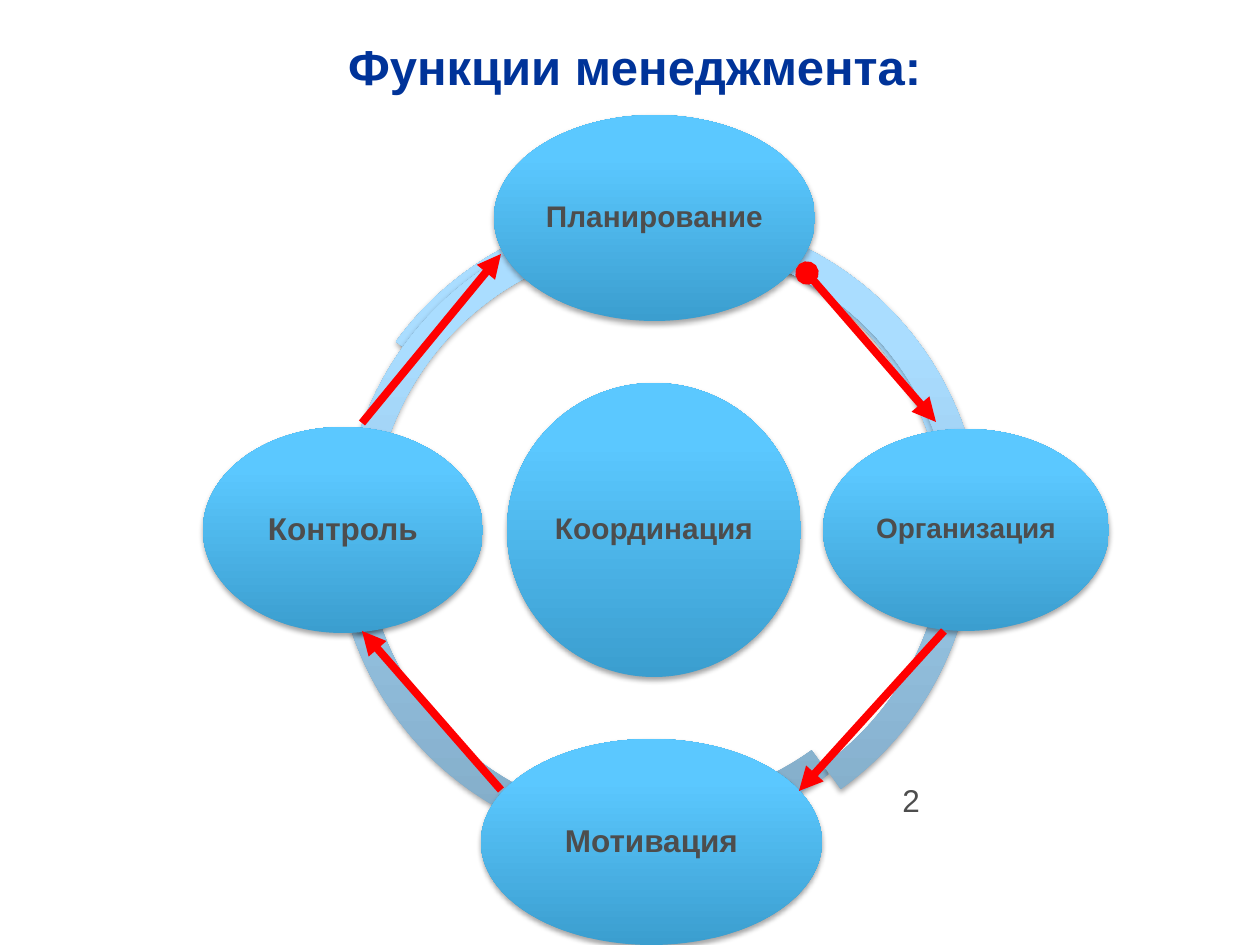
from dataclasses import dataclass

from lxml.etree import SubElement
from pptx import Presentation
from pptx.dml.color import RGBColor
from pptx.enum.shapes import MSO_CONNECTOR as CONN, MSO_SHAPE as SHAPE
from pptx.enum.text import MSO_ANCHOR as ANCHOR, PP_ALIGN as ALIGN
from pptx.oxml.ns import qn
from pptx.util import Emu, Pt

EMU_PER_PX = 914400 / 126
FONT = "Arial"
NAVY, GRAY, RED = "003399", "4D4D4D", "FF0000"
# Gradient stops run from the bottom of the shape to its top
BLUE = ((0, "3B9ECF"), (80, "5BC8FF"), (100, "5DC9FF"))
PALE = ((0, "81AAC6"), (80, "AADDFF"), (100, "ACDDFF"))


@dataclass(frozen=True)
class Arc:
    x: int
    y: int
    start: float
    end: float


@dataclass(frozen=True)
class Node:
    text: str
    x: int
    y: int
    w: int
    h: int
    size: int


@dataclass(frozen=True)
class Arrow:
    x1: int
    y1: int
    x2: int
    y2: int
    head: str = "none"


ARC_SIZE = 639
ARC_THICKNESS = 0.046
ARCS = (
    Arc(335, 210, 108, 162),
    Arc(323, 195, 54.33, 108),
    Arc(335, 210, 216, 54.33),
    Arc(343, 214, 162, 0),
)
NODES = (
    Node("Координация", 507, 383, 294, 294, 17),
    Node("Планирование", 494, 115, 321, 206, 17),
    Node("Организация", 823, 429, 286, 202, 16),
    Node("Мотивация", 481, 739, 341, 206, 18),
    Node("Контроль", 203, 427, 280, 206, 18),
)
ARROWS = (
    Arrow(807, 273, 936, 422, "oval"),
    Arrow(944, 631, 799, 791),
    Arrow(501, 790, 362, 631),
    Arrow(362, 423, 501, 254),
)


def px(n: int) -> Emu:
    return Emu(round(n * EMU_PER_PX))


def rgb(color: str) -> RGBColor:
    return RGBColor.from_string(color)


def add_color(parent, color: str):
    return SubElement(parent, qn("a:srgbClr"), val=color)


def write(tf, text: str, size: int, color: str, bold: bool = False,
          align: ALIGN = ALIGN.LEFT) -> None:
    tf.word_wrap = True
    tf.text = text
    p = tf.paragraphs[0]
    p.alignment = align
    font = p.runs[0].font
    font.name, font.size, font.bold = FONT, Pt(size), bold
    font.color.rgb = rgb(color)


def add_glossy(s, kind: SHAPE, x: int, y: int, w: int, h: int, stops: tuple):
    """Add an unlined shape with a vertical gradient and a soft shadow."""
    sp = s.shapes.add_shape(kind, px(x), px(y), px(w), px(h))
    sp.line.fill.background()
    sp.fill.gradient()
    sp.fill.gradient_angle = 90
    gs_lst = sp._element.spPr.find(qn("a:gradFill")).find(qn("a:gsLst"))
    gs_lst.clear()
    for pos, color in stops:
        add_color(SubElement(gs_lst, qn("a:gs"), pos=str(pos * 1000)), color)
    sp.shadow.inherit = False
    effects = sp._element.spPr.find(qn("a:effectLst"))
    shadow = SubElement(effects, qn("a:outerShdw"), blurRad=str(Pt(3.1)),
                        dist=str(Pt(1.8)), dir="5400000", rotWithShape="0")
    SubElement(add_color(shadow, "000000"), qn("a:alpha"), val="35000")
    return sp


def add_arc(s, arc: Arc) -> None:
    sp = add_glossy(s, SHAPE.BLOCK_ARC, arc.x, arc.y, ARC_SIZE, ARC_SIZE, PALE)
    # Angles are stored in 1/60000 degree, adjustments in 1/100000
    sp.adjustments[0] = arc.start * 0.6
    sp.adjustments[1] = arc.end * 0.6
    sp.adjustments[2] = ARC_THICKNESS


def add_node(s, node: Node) -> None:
    sp = add_glossy(s, SHAPE.OVAL, node.x, node.y, node.w, node.h, BLUE)
    tf = sp.text_frame
    tf.margin_left = tf.margin_right = tf.margin_top = tf.margin_bottom = px(3)
    tf.vertical_anchor = ANCHOR.MIDDLE
    write(tf, node.text, node.size, GRAY, True, ALIGN.CENTER)
    tf.paragraphs[0].line_spacing = 0.9


def add_arrow(s, arrow: Arrow) -> None:
    line = s.shapes.add_connector(CONN.STRAIGHT, px(arrow.x1), px(arrow.y1),
                                  px(arrow.x2), px(arrow.y2))
    line.line.color.rgb = rgb(RED)
    line.line.width = Pt(4.5)
    ln = line.line._get_or_add_ln()
    SubElement(ln, qn("a:headEnd"), type=arrow.head)
    SubElement(ln, qn("a:tailEnd"), type="triangle")
    SubElement(line._element.spPr, qn("a:effectLst"))


def main() -> None:
    prs = Presentation()
    prs.slide_width, prs.slide_height = px(1260), px(945)
    s = prs.slides.add_slide(prs.slide_layouts[6])

    # Title
    title = s.shapes.add_textbox(px(87), px(16), px(1109), px(100))
    title.text_frame.vertical_anchor = ANCHOR.MIDDLE
    write(title.text_frame, "Функции менеджмента: ", 28, NAVY, True, ALIGN.CENTER)

    # Ring and functions
    for arc in ARCS:
        add_arc(s, arc)
    for node in NODES:
        add_node(s, node)

    # Slide number
    number = s.shapes.add_textbox(px(890), px(775), px(284), px(38))
    write(number.text_frame, "2", 18, GRAY)

    # Cycle arrows
    for arrow in ARROWS:
        add_arrow(s, arrow)

    prs.save("out.pptx")


if __name__ == "__main__":
    main()
